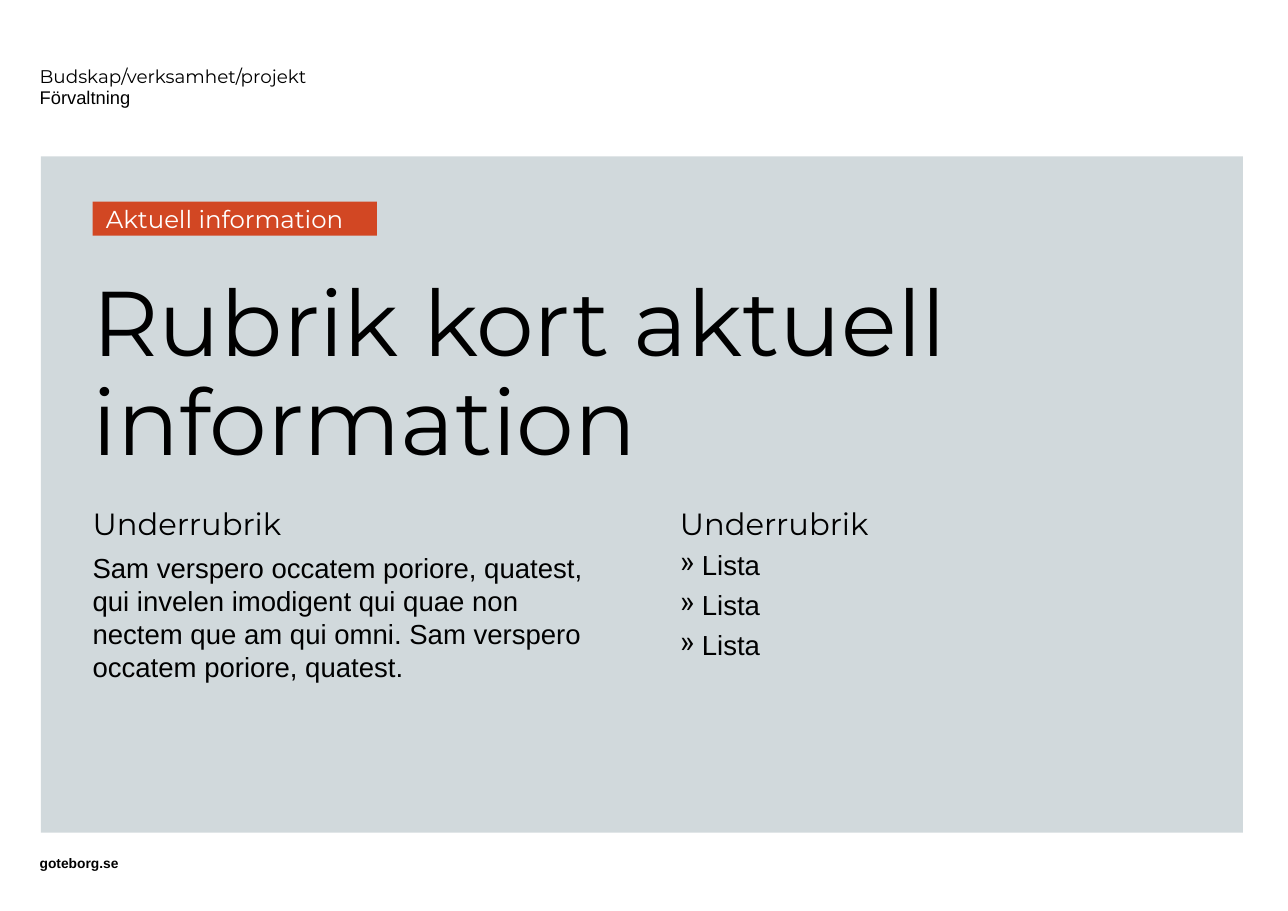
import pptx
import pptx.dml.color
import pptx.enum.shapes
import pptx.enum.text
import pptx.oxml.ns
import pptx.util
from lxml import etree

PX = 9144  # 100 px to the inch
HEADING_FONT, BODY_FONT = "Montserrat", "Arial"
TOP = pptx.enum.text.MSO_ANCHOR.TOP
MIDDLE = pptx.enum.text.MSO_ANCHOR.MIDDLE


def set_text(shape, box, anchor, paragraphs, insets=(0, 0, 0, 0)):
    """Place a shape and fill it with (text, font, size, colour, line spacing, space before)."""
    shape.left, shape.top, shape.width, shape.height = [n * PX for n in box]
    frame = shape.text_frame
    frame.word_wrap = True
    frame.auto_size = pptx.enum.text.MSO_AUTO_SIZE.NONE
    frame.vertical_anchor = anchor
    (frame.margin_left, frame.margin_top,
     frame.margin_right, frame.margin_bottom) = [n * PX for n in insets]
    for index, (text, font, size, colour, spacing, before) in enumerate(paragraphs):
        paragraph = frame.add_paragraph() if index else frame.paragraphs[0]
        paragraph.alignment = pptx.enum.text.PP_ALIGN.LEFT
        paragraph.line_spacing = spacing
        paragraph.space_before = pptx.util.Pt(before)
        run = paragraph.add_run()
        run.text = text
        run.font.name = font
        run.font.size = pptx.util.Pt(size)
        run.font.color.rgb = pptx.dml.color.RGBColor.from_string(colour)
    return frame.paragraphs


def add_block(box, fill):
    block = slide.shapes.add_shape(
        pptx.enum.shapes.MSO_SHAPE.RECTANGLE, *[n * PX for n in box])
    block.shadow.inherit = False
    block.fill.solid()
    block.fill.fore_color.rgb = pptx.dml.color.RGBColor.from_string(fill)
    block.line.fill.background()
    return block


presentation = pptx.Presentation()
presentation.slide_width = 1169 * PX
presentation.slide_height = 827 * PX
slide = presentation.slides.add_slide(presentation.slide_layouts[5])

# Panel goes behind the title
panel = add_block((37, 142, 1091, 614), "D1D9DC")
slide.shapes.title._element.addprevious(panel._element)

set_text(slide.shapes.title, (84, 256, 910, 171), MIDDLE,
         [("Rubrik kort aktuell information", HEADING_FONT, 60, "000000", 0.9, 0)])

label_box = (84, 183, 258, 31)
set_text(add_block(label_box, "D24723"), label_box, MIDDLE,
         [("Aktuell information", HEADING_FONT, 16, "FFFFFF", 0.9, 0)],
         insets=(12, 12, 12, 8))

# Two columns under the same subheading
subheading = ("Underrubrik", HEADING_FONT, 20, "000000", 0.9, 0)
body = ("Sam verspero occatem poriore, quatest, qui invelen imodigent qui quae non "
        "nectem que am qui omni. Sam verspero occatem poriore, quatest.",
        BODY_FONT, 18, "000000", pptx.util.Pt(21.6), 6)
list_item = ("Lista", BODY_FONT, 18, "000000", 0.9, 6.5)
for left, content in ((84, [body]), (617, [list_item] * 3)):
    column = slide.shapes.add_textbox(0, 0, 0, 0)
    paragraphs = set_text(column, (left, 462, 468, 258), TOP, [subheading] + content)
    if content[0] is list_item:
        for paragraph in paragraphs[1:]:
            properties = paragraph._p.get_or_add_pPr()
            properties.set("marL", str(20 * PX))
            properties.set("indent", str(-20 * PX))
            bullet = etree.SubElement(properties, pptx.oxml.ns.qn("a:buChar"))
            bullet.set("char", "»")

web_address = set_text(slide.shapes.add_textbox(0, 0, 0, 0), (36, 775, 518, 17), MIDDLE,
                       [("goteborg.se", BODY_FONT, 9, "000000", 1.0, 0)])
web_address[0].runs[0].font.bold = True

sender_spacing = pptx.util.Pt(14.1)
set_text(slide.shapes.add_textbox(0, 0, 0, 0), (36, 62, 552, 34), MIDDLE,
         [("Budskap/verksamhet/projekt", HEADING_FONT, 12, "000000", sender_spacing, 0),
          ("Förvaltning", BODY_FONT, 12, "000000", sender_spacing, 0)])

presentation.save("out.pptx")
